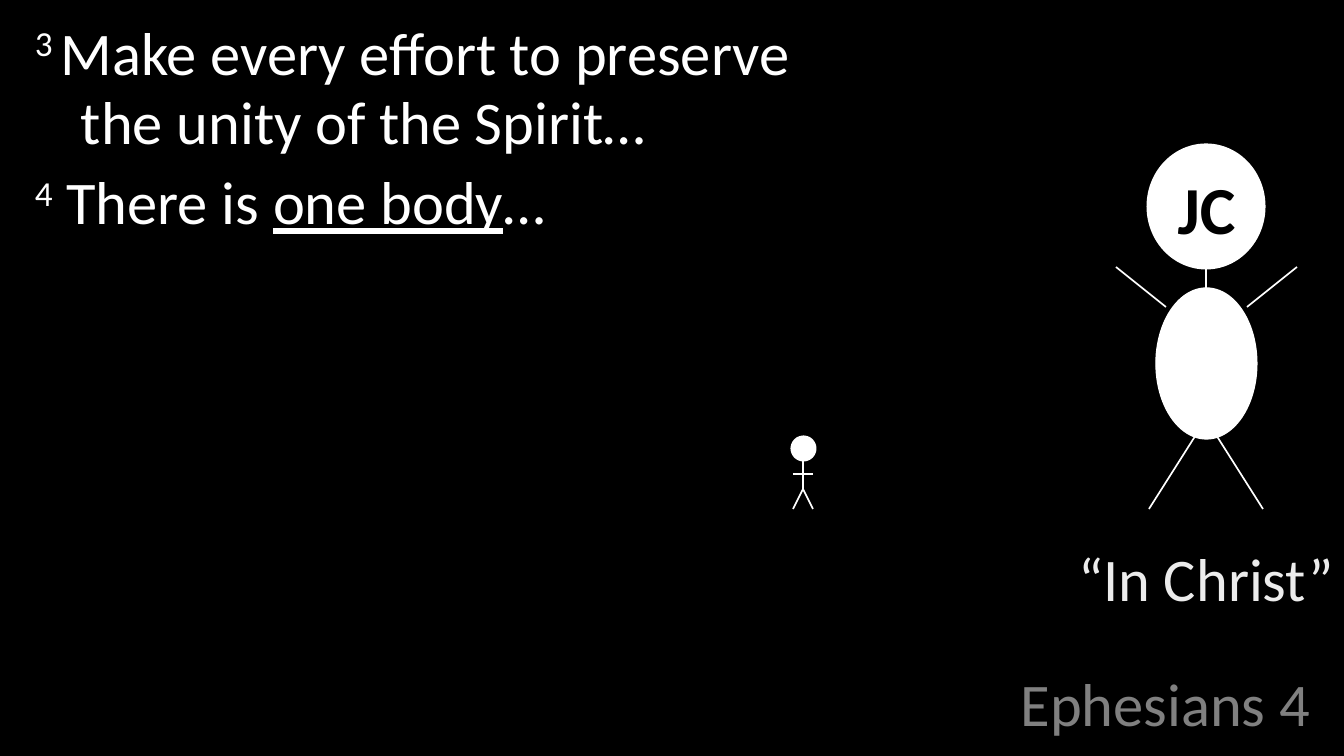
from lxml.etree import SubElement
from pptx import Presentation
from pptx.dml.color import RGBColor
from pptx.enum.shapes import MSO_CONNECTOR as CONNECTOR, MSO_SHAPE as SHAPE
from pptx.enum.text import MSO_ANCHOR as ANCHOR, PP_ALIGN as ALIGN
from pptx.oxml.ns import qn
from pptx.util import Pt

PX = 914400 / 121
BLACK = RGBColor(0x00, 0x00, 0x00)
WHITE = RGBColor(0xFF, 0xFF, 0xFF)
GREY = RGBColor(0x80, 0x80, 0x80)
PALE = RGBColor(0xEC, 0xEC, 0xEC)


def px(*lengths):
    return [round(length * PX) for length in lengths]


def add_text(paragraphs, box, size=36, color=WHITE, bold=False, align=ALIGN.LEFT,
             anchor=ANCHOR.TOP, line_spacing=1.0, space=0, hanging=0):
    """Each paragraph is a list of (text, style); a newline is a line break."""
    frame = slide.shapes.add_textbox(*px(*box)).text_frame
    frame.word_wrap = True
    frame.vertical_anchor = anchor
    for index, pieces in enumerate(paragraphs):
        paragraph = frame.add_paragraph() if index else frame.paragraphs[0]
        paragraph.alignment = align
        paragraph.line_spacing = line_spacing
        if index:
            paragraph.space_before = Pt(space)
        if hanging:
            indent = px(hanging)[0]
            properties = paragraph._p.get_or_add_pPr()
            properties.set("marL", str(indent))
            properties.set("indent", str(-indent))
        for text, style in pieces:
            if text == "\n":
                paragraph.add_line_break()
                continue
            run = paragraph.add_run()
            run.text = text
            font = run.font
            font.name, font.size, font.bold = "Calibri", Pt(size), bold
            font.color.rgb = color
            if style == "underline":
                font.underline = True
            if style == "superscript":
                font._element.set("baseline", "30000")


presentation = Presentation()
presentation.slide_width, presentation.slide_height = px(1344, 756)
slide = presentation.slides.add_slide(presentation.slide_layouts[6])
slide.background.fill.solid()
slide.background.fill.fore_color.rgb = BLACK

# Heading and verses
add_text([[("Ephesians 4", "")]], (854, 673, 468, 71), color=GREY,
         align=ALIGN.RIGHT, anchor=ANCHOR.BOTTOM, line_spacing=0.8)
add_text([[("3 ", "superscript"), ("Make every effort to preserve ", ""), ("\n", ""),
           ("the unity of the Spirit…", "")],
          [("4", "superscript"), (" There is ", ""), ("one body", "underline"), ("…", "")]],
         (23, 14, 1300, 640), line_spacing=0.95, space=7, hanging=46)

# Stick figures: limbs as x1, y1, x2, y2 and ovals as box, outline width
small_figure = (
    [(803, 459, 803, 489), (803, 489, 813, 509), (803, 489, 793, 509), (793, 474, 813, 474)],
    [((793, 438, 21, 21), 3)],
)
large_figure = (
    [(1206, 267, 1206, 419), (1206, 419, 1263, 509), (1206, 419, 1149, 509),
     (1116, 267, 1166, 307), (1297, 267, 1247, 307)],
    [((1149, 146, 114, 121), 3), ((1156, 288, 101, 151), 0.75)],
)
for limbs, ovals in (small_figure, large_figure):
    figure = slide.shapes.add_group_shape()
    for ends in limbs:
        limb = figure.shapes.add_connector(CONNECTOR.STRAIGHT, *px(*ends))
        limb.line.color.rgb = WHITE
        limb.line.width = Pt(1)
        SubElement(limb._element.spPr, qn("a:effectLst"))
    for box, width in ovals:
        oval = figure.shapes.add_shape(SHAPE.OVAL, *px(*box))
        oval.shadow.inherit = False
        oval.fill.solid()
        oval.fill.fore_color.rgb = WHITE
        oval.line.color.rgb = WHITE
        oval.line.width = Pt(width)

# Labels on and under the large figure
add_text([[("JC", "")]], (1141, 161, 131, 93), size=40, color=BLACK, bold=True,
         align=ALIGN.CENTER)
add_text([[("“In Christ”", "")]], (1065, 535, 282, 86), color=PALE,
         align=ALIGN.CENTER, hanging=45)

presentation.save("out.pptx")
